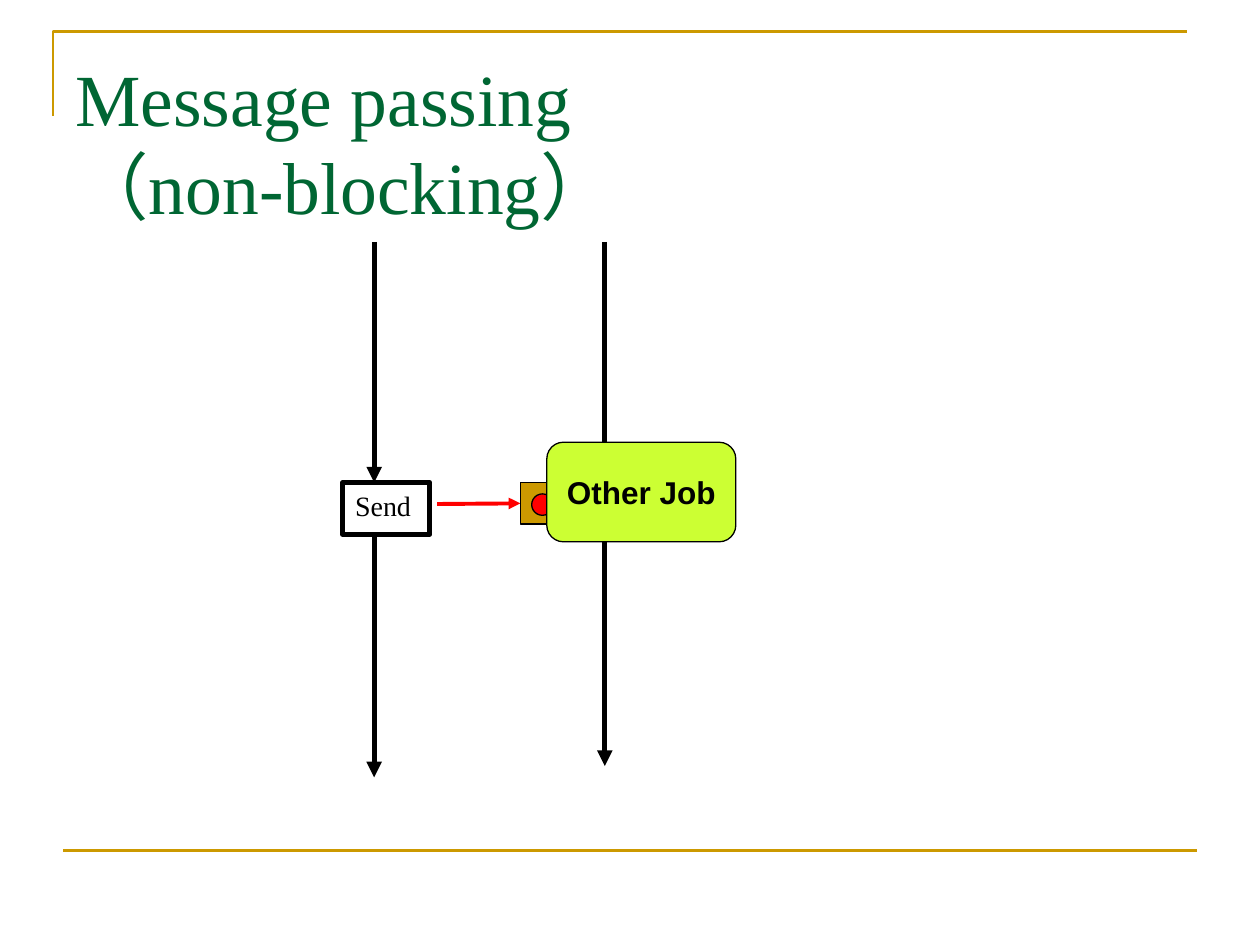
from pptx import Presentation
from pptx.dml.color import RGBColor
from pptx.enum.shapes import MSO_CONNECTOR, MSO_SHAPE
from pptx.enum.text import MSO_ANCHOR, PP_ALIGN
from pptx.oxml.ns import qn
from pptx.util import Inches, Pt
from lxml.etree import SubElement

THEME = {
    "gold": RGBColor(0xCC, 0x99, 0x00),
    "green": RGBColor(0x00, 0x66, 0x33),
    "lime": RGBColor(0xCC, 0xFF, 0x33),
    "red": RGBColor(0xFF, 0x00, 0x00),
    "black": RGBColor(0x00, 0x00, 0x00),
    "serif": "Times New Roman",
    "sans": "Arial",
    "title": Pt(42),
    "job": Pt(18),
    "send": Pt(16),
}

prs = Presentation()
prs.slide_width, prs.slide_height = Inches(10), Inches(7.5)
s = prs.slides.add_slide(prs.slide_layouts[6])


def add_line(x1, y1, x2, y2, color, width, arrow=True):
    c = s.shapes.add_connector(
        MSO_CONNECTOR.STRAIGHT, Inches(x1), Inches(y1), Inches(x2), Inches(y2))
    c.line.color.rgb = THEME[color]
    c.line.width = Pt(width)
    if arrow:
        SubElement(c.line._get_or_add_ln(), qn("a:tailEnd"), type="triangle")
    SubElement(c._element.spPr, qn("a:effectLst"))
    return c


def write(sp, text, size, font, color, bold=False, align=PP_ALIGN.LEFT,
          **frame):
    tf = sp.text_frame
    for name, value in frame.items():
        setattr(tf, name, value)
    p = tf.paragraphs[0]
    p.text = text
    p.alignment = align
    for r in p.runs:
        style = {"size": THEME[size], "name": THEME[font], "bold": bold}
        for name, value in style.items():
            setattr(r.font, name, value)
        r.font.color.rgb = THEME[color]


fb = s.shapes.build_freeform(Inches(0.42), Inches(0.92))
fb.add_line_segments(
    [(Inches(0.42), Inches(0.25)), (Inches(9.42), Inches(0.25))], close=False)
corner = fb.convert_to_shape()
corner.shadow.inherit = False
corner.fill.background()
corner.line.color.rgb = THEME["gold"]
corner.line.width = Pt(1.5)
add_line(0.5, 6.75, 9.5, 6.75, "gold", 1.5, arrow=False)

title = s.shapes.add_textbox(Inches(0.5), Inches(0.3), Inches(9), Inches(1.25))
write(title, "Message passing\v（non-blocking）", "title", "serif", "green",
      word_wrap=True, vertical_anchor=MSO_ANCHOR.TOP, margin_top=Inches(0.12))

sender_x, receiver_x = 2.97, 4.8
for x, y1, y2 in [(receiver_x, 4.17, 6.08), (sender_x, 4.25, 6.17),
                  (sender_x, 1.92, 3.83), (receiver_x, 1.92, 3.83)]:
    add_line(x, y1, x, y2, "black", 3)
message = add_line(3.47, 4, 4.13, 4, "red", 2.25)

boxes = {}
for name, kind, x, y, w, h, fill, width in [
    ("send", MSO_SHAPE.RECTANGLE, 2.72, 3.83, 0.69, 0.41, None, 3),
    ("buffer", MSO_SHAPE.RECTANGLE, 4.13, 3.83, 0.33, 0.33, "gold", 0.75),
    ("data", MSO_SHAPE.OVAL, 4.22, 3.92, 0.17, 0.17, "red", 0.75),
    ("job", MSO_SHAPE.ROUNDED_RECTANGLE, 4.34, 3.51, 1.5, 0.79, "lime", 0.75),
]:
    sp = s.shapes.add_shape(kind, Inches(x), Inches(y), Inches(w), Inches(h))
    sp.shadow.inherit = False
    if fill:
        sp.fill.solid()
        sp.fill.fore_color.rgb = THEME[fill]
    else:
        sp.fill.background()
    sp.line.color.rgb = THEME["black"]
    sp.line.width = Pt(width)
    boxes[name] = sp

message.end_connect(boxes["buffer"], 1)
write(boxes["send"], "Send", "send", "serif", "black",
      word_wrap=False, vertical_anchor=MSO_ANCHOR.TOP)
write(boxes["job"], "Other Job", "job", "sans", "black", bold=True,
      align=PP_ALIGN.CENTER, word_wrap=False,
      vertical_anchor=MSO_ANCHOR.MIDDLE)

prs.save("out.pptx")
